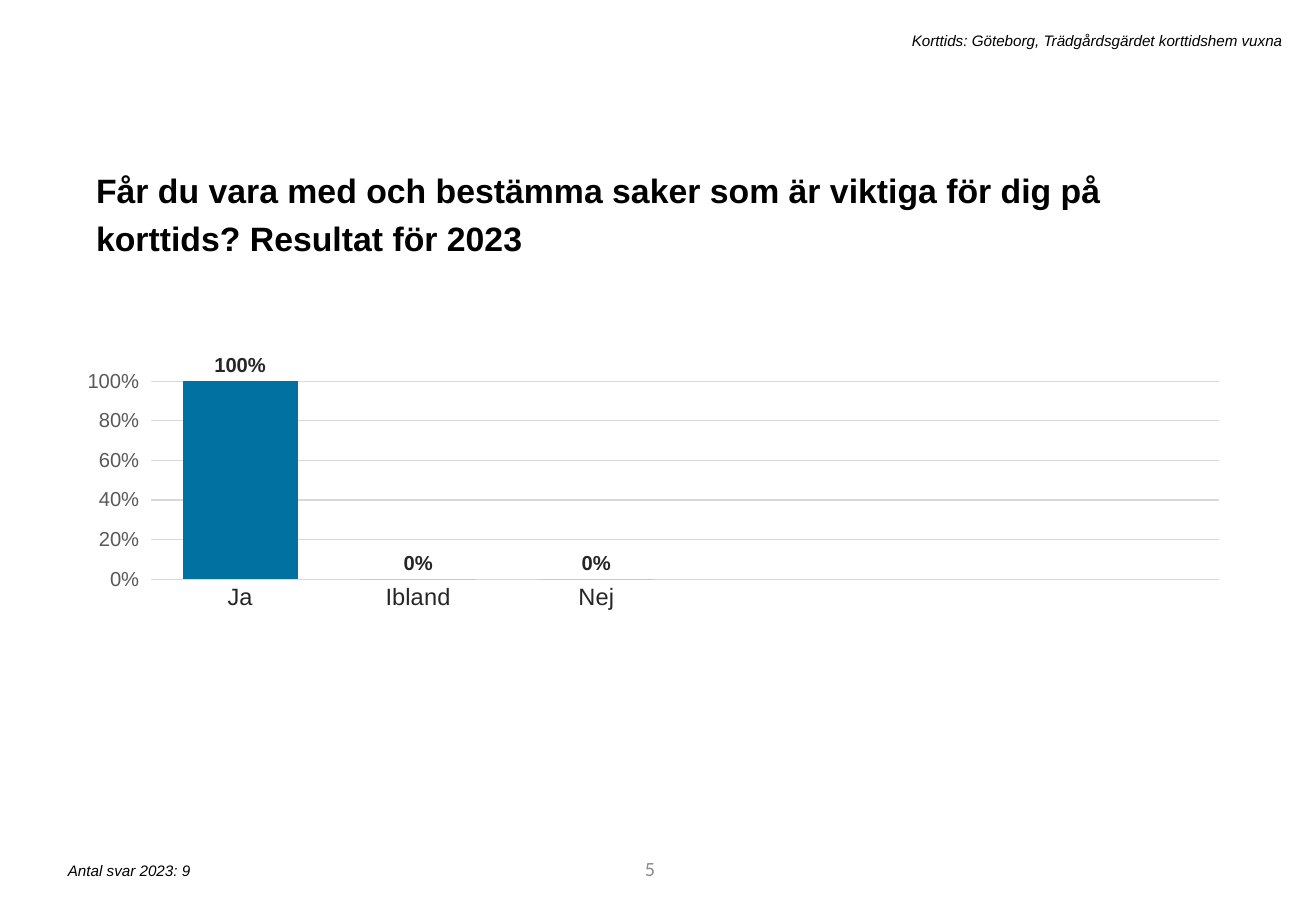
from lxml import etree
from pptx import Presentation
from pptx.chart.data import CategoryChartData
from pptx.dml.color import RGBColor
from pptx.enum.chart import XL_CHART_TYPE, XL_LABEL_POSITION, XL_TICK_MARK
from pptx.enum.text import MSO_ANCHOR, MSO_AUTO_SIZE, PP_ALIGN
from pptx.util import Inches, Pt

LEFT, RIGHT = PP_ALIGN.LEFT, PP_ALIGN.RIGHT
TOP, MIDDLE = MSO_ANCHOR.TOP, MSO_ANCHOR.MIDDLE
NO_AUTOFIT = MSO_AUTO_SIZE.NONE
COLUMNS = XL_CHART_TYPE.COLUMN_CLUSTERED
OUTSIDE_END = XL_LABEL_POSITION.OUTSIDE_END
NO_TICKS, OUTSIDE_TICKS = XL_TICK_MARK.NONE, XL_TICK_MARK.OUTSIDE
GRID_GREY = "D9D9D9"


def style_font(font, size, color, name="Arial", bold=False, italic=False):
    font.size = Pt(size)
    font.name = name
    font.bold = bold
    font.italic = italic
    font.color.rgb = RGBColor.from_string(color)


def style_line(line, color):
    line.color.rgb = RGBColor.from_string(color)
    line.width = Pt(0.75)


presentation = Presentation()
presentation.slide_width = Inches(10.83)
presentation.slide_height = Inches(7.5)
slide = presentation.slides.add_slide(presentation.slide_layouts[5])

# Question
title = slide.shapes.title
title.left, title.top = Inches(0.69), Inches(1.28)
title.width, title.height = Inches(9.4), Inches(0.9)
title.text_frame.text = "Får du vara med och bestämma saker som är viktiga för dig på korttids? Resultat för 2023"
title.text_frame.word_wrap = True
title.text_frame.auto_size = NO_AUTOFIT
title.text_frame.vertical_anchor = TOP
paragraph = title.text_frame.paragraphs[0]
paragraph.alignment = LEFT
paragraph.line_spacing = 1.2
paragraph.space_before = Pt(10)
style_font(paragraph.runs[0].font, 20, "000000", bold=True)

# Answers
chart_data = CategoryChartData(number_format="0%")
chart_data.categories = ["Ja", "Ibland", "Nej", "", "", ""]
chart_data.add_series("Series 1", [1, 0, 0, None, None, None])
chart = slide.shapes.add_chart(
    COLUMNS, Inches(0.72), Inches(2.53), Inches(9.4), Inches(3.95), chart_data
).chart
chart.has_legend = False
chart.has_title = False
style_font(chart.font, 10, "000000")

category_axis = chart.category_axis
category_axis.major_tick_mark = NO_TICKS
style_font(category_axis.tick_labels.font, 14, "262626")
style_line(category_axis.format.line, GRID_GREY)

value_axis = chart.value_axis
value_axis.minimum_scale = 0
value_axis.maximum_scale = 1
value_axis.major_unit = 0.2
value_axis.major_tick_mark = OUTSIDE_TICKS
value_axis.tick_labels.number_format = "0%"
value_axis.tick_labels.number_format_is_linked = False
style_font(value_axis.tick_labels.font, 12, "595959")
value_axis.format.line.fill.background()
style_line(value_axis.major_gridlines.format.line, GRID_GREY)

plot = chart.plots[0]
plot.gap_width = 55
plot.vary_by_categories = False
answers = plot.series[0]
answers.format.fill.solid()
answers.format.fill.fore_color.rgb = RGBColor.from_string("0071A1")
labels = answers.data_labels
labels.show_value = True
labels.position = OUTSIDE_END
labels.number_format = "0%"
labels.number_format_is_linked = False
style_font(labels.font, 12, "262626", bold=True)

# Fixed inner plot area, as fractions of the chart
plot_area = plot._element.getparent()
namespace = etree.QName(plot_area).namespace
for old_layout in plot_area.findall(f"{{{namespace}}}layout"):
    plot_area.remove(old_layout)
layout = etree.Element(f"{{{namespace}}}layout")
manual_layout = etree.SubElement(layout, f"{{{namespace}}}manualLayout")
for tag, value in [("layoutTarget", "inner"), ("xMode", "edge"), ("yMode", "edge"),
                   ("x", "0.054"), ("y", "0.154"), ("w", "0.937"), ("h", "0.413")]:
    etree.SubElement(manual_layout, f"{{{namespace}}}{tag}").set("val", value)
plot_area.insert(0, layout)

# Page number, unit name and number of answers
small_print = {"size": 9, "color": "000000", "italic": True}
page_number = {"size": 12, "color": "8C8C8C", "name": "Calibri"}
for text, left, top, width, height, alignment, anchor, font_style in [
    ("5", 3.05, 6.95, 2.44, 0.4, RIGHT, MIDDLE, page_number),
    ("Korttids: Göteborg, Trädgårdsgärdet korttidshem vuxna",
     1.79, 0.21, 8.86, 0.25, RIGHT, TOP, small_print),
    ("Antal svar 2023: 9", 0.46, 7.04, 4.41, 0.25, LEFT, TOP, small_print),
]:
    text_box = slide.shapes.add_textbox(Inches(left), Inches(top), Inches(width), Inches(height))
    text_frame = text_box.text_frame
    text_frame.text = text
    text_frame.word_wrap = True
    text_frame.vertical_anchor = anchor
    paragraph = text_frame.paragraphs[0]
    paragraph.alignment = alignment
    style_font(paragraph.runs[0].font, **font_style)

presentation.save("out.pptx")
